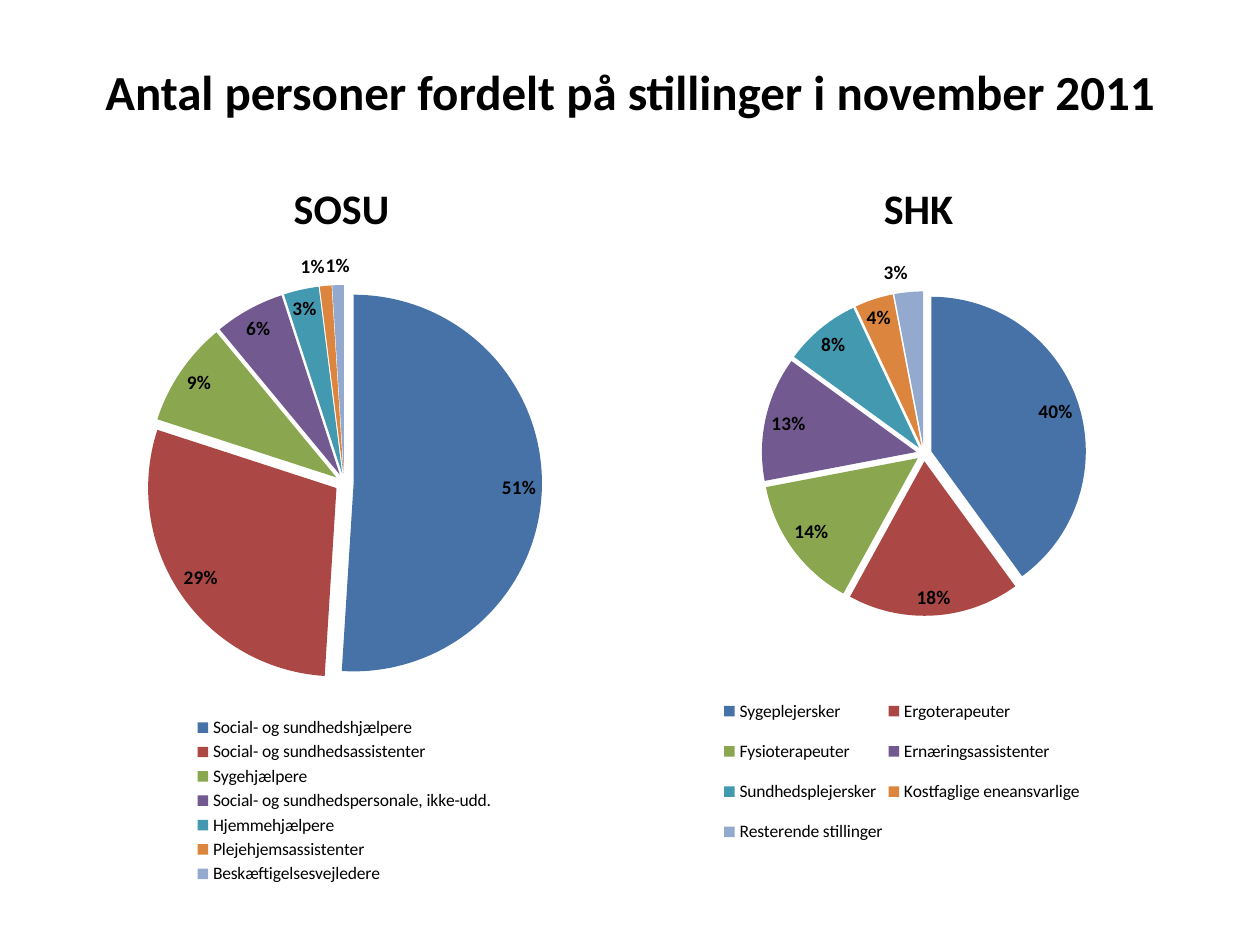
from lxml import etree
from pptx import Presentation
from pptx.chart.data import CategoryChartData
from pptx.dml.color import RGBColor
from pptx.enum.chart import XL_CHART_TYPE as ChartType
from pptx.enum.chart import XL_LABEL_POSITION as LabelPosition
from pptx.enum.chart import XL_LEGEND_POSITION as LegendPosition
from pptx.enum.text import MSO_ANCHOR as Anchor
from pptx.enum.text import PP_ALIGN as Align
from pptx.oxml.ns import qn
from pptx.util import Cm, Pt

BLACK = RGBColor(0x00, 0x00, 0x00)
BLUE = RGBColor(0x46, 0x72, 0xA8)
RED = RGBColor(0xAB, 0x47, 0x44)
GREEN = RGBColor(0x8A, 0xA6, 0x4F)
PURPLE = RGBColor(0x72, 0x59, 0x90)
TEAL = RGBColor(0x42, 0x99, 0xB0)
ORANGE = RGBColor(0xDC, 0x85, 0x3E)
PALE_BLUE = RGBColor(0x93, 0xA9, 0xCE)
SLICE_COLORS = [BLUE, RED, GREEN, PURPLE, TEAL, ORANGE, PALE_BLUE]

MARGIN = 1.27
COLUMN_WIDTH = 11.23
SHK_LEFT = 25.4 - MARGIN - COLUMN_WIDTH

SOSU = [
    ("Social- og sundhedshjælpere", 51),
    ("Social- og sundhedsassistenter", 29),
    ("Sygehjælpere", 9),
    ("Social- og sundhedspersonale, ikke-udd.", 6),
    ("Hjemmehjælpere", 3),
    ("Plejehjemsassistenter", 1),
    ("Beskæftigelsesvejledere", 1),
]
SHK = [
    ("Sygeplejersker", 40),
    ("Ergoterapeuter", 18),
    ("Fysioterapeuter", 14),
    ("Ernæringsassistenter", 13),
    ("Sundhedsplejersker", 8),
    ("Kostfaglige eneansvarlige", 4),
    ("Resterende stillinger", 3),
]


class SlideBuilder:
    font_name = "Calibri"
    explosion = 5

    def __init__(self, slide):
        self.slide = slide

    def style_font(self, font, size, bold=False):
        font.name = self.font_name
        font.size = Pt(size)
        font.bold = bold
        font.color.rgb = BLACK

    def heading(self, text, left, top, width, height, size, anchor):
        box = self.slide.shapes.add_textbox(Cm(left), Cm(top), Cm(width), Cm(height))
        frame = box.text_frame
        frame.word_wrap = True
        frame.vertical_anchor = anchor
        frame.text = text
        paragraph = frame.paragraphs[0]
        paragraph.alignment = Align.CENTER
        self.style_font(paragraph.runs[0].font, size, bold=True)

    def place(self, element, box, inner=False):
        for old_layout in element.findall(qn("c:layout")):
            element.remove(old_layout)
        layout = etree.Element(qn("c:layout"))
        manual = etree.SubElement(layout, qn("c:manualLayout"))
        settings = [("layoutTarget", "inner")] if inner else []
        settings += [("xMode", "edge"), ("yMode", "edge")]
        settings += zip("xywh", box)
        for name, value in settings:
            etree.SubElement(manual, qn(f"c:{name}")).set("val", str(value))
        element.insert(0 if inner else 1, layout)

    def pie(self, rows, left, plot_box, legend_box):
        data = CategoryChartData()
        data.categories = [name for name, _ in rows]
        data.add_series("Series 1", [value for _, value in rows])
        chart = self.slide.shapes.add_chart(
            ChartType.PIE, Cm(left), Cm(4.83), Cm(COLUMN_WIDTH), Cm(13.08), data
        ).chart
        chart.has_title = False
        self.style_font(chart.font, 10)

        chart.has_legend = True
        chart.legend.position = LegendPosition.BOTTOM
        chart.legend.include_in_layout = False
        self.place(chart.legend._element, legend_box)

        plot = chart.plots[0]
        plot.vary_by_categories = True
        self.place(plot._element.getparent(), plot_box, inner=True)

        series = plot.series[0]
        for index, color in enumerate(SLICE_COLORS):
            fill = series.points[index].format.fill
            fill.solid()
            fill.fore_color.rgb = color
        explosion = etree.Element(qn("c:explosion"))
        explosion.set("val", str(self.explosion))
        series._element.find(qn("c:dPt")).addprevious(explosion)

        plot.has_data_labels = True
        labels = plot.data_labels
        labels.show_percentage = True
        labels.show_value = False
        labels.number_format = "0%"
        labels.number_format_is_linked = False
        labels.position = LabelPosition.BEST_FIT
        self.style_font(labels.font, 11, bold=True)


def main():
    presentation = Presentation()
    presentation.slide_width = Cm(25.4)
    presentation.slide_height = Cm(19.05)
    builder = SlideBuilder(presentation.slides.add_slide(presentation.slide_layouts[6]))

    builder.heading(
        "Antal personer fordelt på stillinger i november 2011",
        MARGIN, 0.76, 22.86, 2.16, 28, Anchor.MIDDLE,
    )
    columns = [
        ("SOSU", SOSU, MARGIN, (0.15, 0.07, 0.71, 0.61), (0.23, 0.73, 0.55, 0.27)),
        ("SHK", SHK, SHK_LEFT, (0.19, 0.08, 0.64, 0.5), (0.14, 0.68, 0.66, 0.28)),
    ]
    for title, rows, left, plot_box, legend_box in columns:
        builder.heading(title, left, 3.63, COLUMN_WIDTH, 1.2, 24, Anchor.BOTTOM)
        builder.pie(rows, left, plot_box, legend_box)

    presentation.save("out.pptx")


if __name__ == "__main__":
    main()
